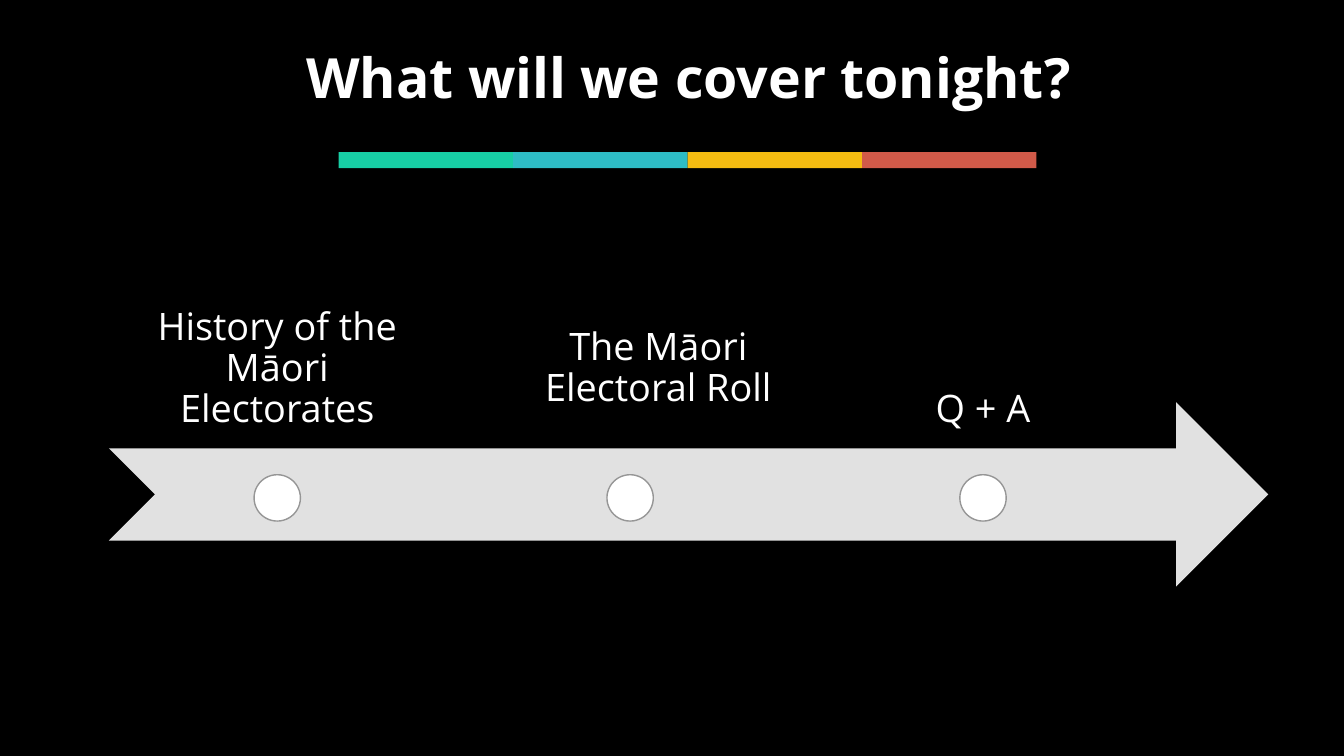
from dataclasses import dataclass

import pptx
import pptx.dml.color
import pptx.enum.shapes
import pptx.enum.text
import pptx.util

Inches = pptx.util.Inches
Pt = pptx.util.Pt
Shape = pptx.enum.shapes.MSO_SHAPE
Anchor = pptx.enum.text.MSO_ANCHOR


@dataclass(frozen=True)
class Theme:
    font: str = "Open Sans"
    title_size: float = 39.6
    label_size: float = 27
    background: str = "000000"
    text: str = "FFFFFF"
    arrow: str = "E1E1E1"
    marker: str = "FFFFFF"
    marker_line: str = "969696"
    stripes: tuple = ("17CFA5", "2EBCC5", "F5BC11", "D15A49")


THEME = Theme()

# Topic, left and top of its label, vertical anchor
TOPICS = (
    ("History of the Māori Electorates", 1.08, 2.65, Anchor.BOTTOM),
    ("The Māori Electoral Roll", 4.86, 3.04, Anchor.TOP),
    ("Q + A", 8.08, 2.65, Anchor.BOTTOM),
)


def rgb(value):
    return pptx.dml.color.RGBColor.from_string(value)


def write_text(shape, text, size=THEME.label_size, bold=False,
               anchor=Anchor.MIDDLE, inset=0):
    frame = shape.text_frame
    frame.word_wrap = True
    frame.auto_size = pptx.enum.text.MSO_AUTO_SIZE.NONE
    frame.vertical_anchor = anchor
    frame.margin_left = frame.margin_right = Inches(inset)
    frame.margin_top = frame.margin_bottom = Inches(inset)
    paragraph = frame.paragraphs[0]
    paragraph.text = text
    paragraph.alignment = pptx.enum.text.PP_ALIGN.CENTER
    paragraph.line_spacing = 0.9
    paragraph.font.name = THEME.font
    paragraph.font.size = Pt(size)
    paragraph.font.bold = bold
    paragraph.font.color.rgb = rgb(THEME.text)


def add_filled_shape(shapes, kind, left, top, width, height, fill, line=None):
    shape = shapes.add_shape(
        kind, Inches(left), Inches(top), Inches(width), Inches(height))
    shape.shadow.inherit = False
    shape.fill.solid()
    shape.fill.fore_color.rgb = rgb(fill)
    if line:
        shape.line.color.rgb = rgb(line)
        shape.line.width = Pt(1)
    else:
        shape.line.fill.background()


def add_title(slide, text):
    title = slide.shapes.title
    title.left, title.top = Inches(2.89), Inches(0.46)
    title.width, title.height = Inches(7.88), Inches(0.68)
    write_text(title, text, size=THEME.title_size, bold=True)


def add_timeline(slide):
    shapes = slide.shapes.add_group_shape().shapes
    add_filled_shape(shapes, Shape.NOTCHED_RIGHT_ARROW,
                     1.08, 3.99, 11.5, 1.83, THEME.arrow)
    for index, (topic, left, top, anchor) in enumerate(TOPICS):
        label = shapes.add_textbox(
            Inches(left), Inches(top), Inches(3.34), Inches(1.83))
        write_text(label, topic, anchor=anchor, inset=0.21)
        add_filled_shape(shapes, Shape.OVAL, 2.52 + 3.5 * index, 4.71,
                         0.46, 0.46, THEME.marker, THEME.marker_line)


def add_stripes(slide):
    shapes = slide.shapes.add_group_shape().shapes
    width = 1.73
    for index, color in enumerate(THEME.stripes):
        add_filled_shape(shapes, Shape.RECTANGLE, 3.36 + width * index, 1.51,
                         width, 0.16, color)


def main():
    presentation = pptx.Presentation()
    presentation.slide_width = Inches(13.33)
    presentation.slide_height = Inches(7.5)
    title_only = presentation.slide_layouts[5]
    slide = presentation.slides.add_slide(title_only)
    slide.background.fill.solid()
    slide.background.fill.fore_color.rgb = rgb(THEME.background)
    add_title(slide, "What will we cover tonight?")
    add_timeline(slide)
    add_stripes(slide)
    presentation.save("out.pptx")


if __name__ == "__main__":
    main()
